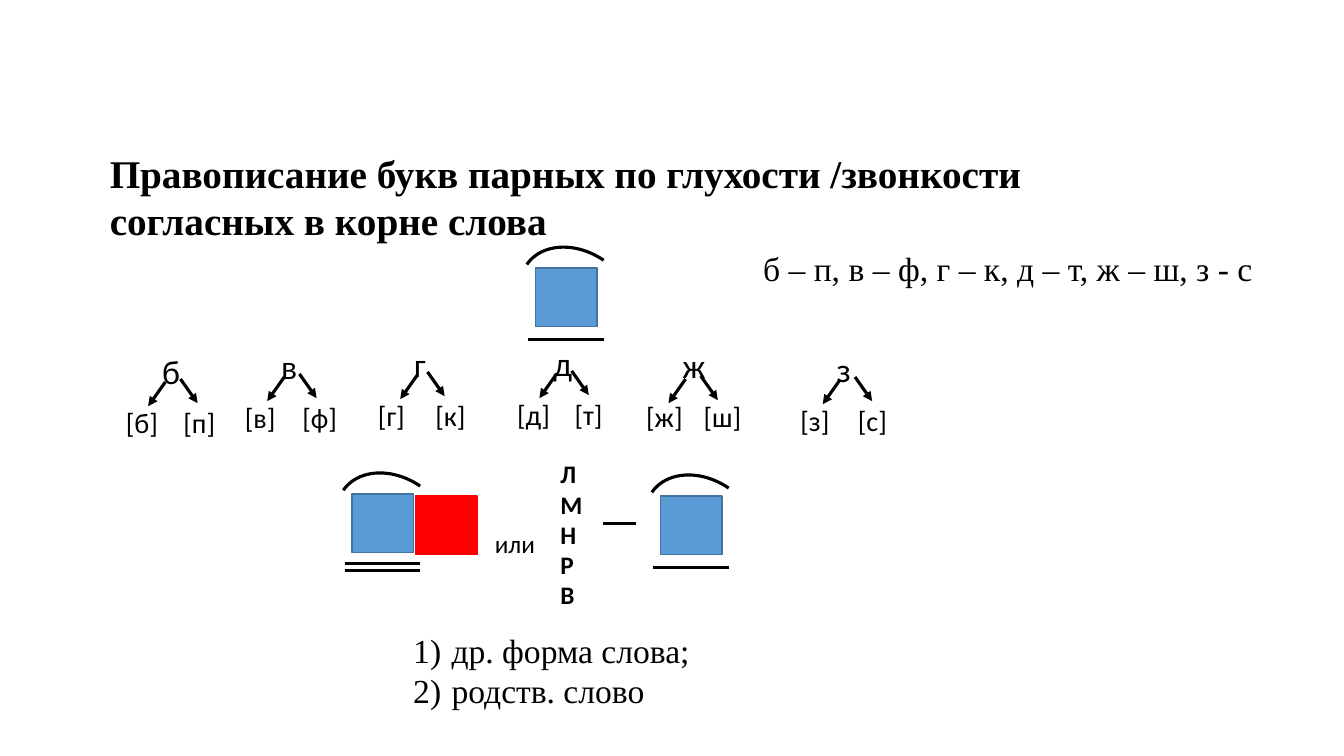
from dataclasses import dataclass

from lxml.etree import SubElement
from pptx import Presentation
from pptx.dml.color import RGBColor
from pptx.enum.shapes import MSO_CONNECTOR, MSO_SHAPE
from pptx.enum.text import MSO_AUTO_SIZE
from pptx.oxml.ns import qn
from pptx.util import Pt

PX = 9144  # 100 px to the inch


@dataclass(frozen=True)
class Theme:
    ink: RGBColor = RGBColor(0x00, 0x00, 0x00)
    root: RGBColor = RGBColor(0x5B, 0x9B, 0xD5)
    root_edge: RGBColor = RGBColor(0x43, 0x73, 0x9E)
    ending: RGBColor = RGBColor(0xFF, 0x00, 0x00)
    serif: str = "Times New Roman"
    sans: str = "Calibri"
    title: int = 28
    body: int = 24
    sound: int = 20
    small: int = 18
    stroke: float = 2.25


theme = Theme()
deck = Presentation()
deck.slide_width, deck.slide_height = 1333 * PX, 750 * PX
page = deck.slides.add_slide(deck.slide_layouts[6])


def add_text(lines, place, size, font=theme.sans, bold=False, numbered=False):
    box = page.shapes.add_textbox(*(value * PX for value in place))
    frame = box.text_frame
    frame.word_wrap = True
    frame.auto_size = MSO_AUTO_SIZE.SHAPE_TO_FIT_TEXT
    for index, line in enumerate(lines):
        para = frame.paragraphs[0] if index == 0 else frame.add_paragraph()
        if numbered:
            properties = para._p.get_or_add_pPr()
            properties.set("marL", str(38 * PX))
            properties.set("indent", str(-38 * PX))
            SubElement(properties, qn("a:buFont"), typeface="+mj-lt")
            SubElement(properties, qn("a:buAutoNum"), type="arabicParenR")
        span = para.add_run()
        span.text = line
        span.font.name = font
        span.font.size = Pt(size)
        span.font.bold = bold
        span.font.color.rgb = theme.ink


def add_stroke(start, end, arrow=False):
    stroke = page.shapes.add_connector(
        MSO_CONNECTOR.STRAIGHT, *(value * PX for value in (*start, *end)))
    stroke.line.color.rgb = theme.ink
    stroke.line.width = Pt(theme.stroke)
    if arrow:
        SubElement(stroke.line._get_or_add_ln(), qn("a:tailEnd"), type="triangle")
    SubElement(stroke._element.spPr, qn("a:effectLst"))


add_text(["Правописание букв парных по глухости /звонкости согласных в корне слова"],
         (99, 143, 1012, 104), theme.title, theme.serif, bold=True)
add_text(["б – п, в – ф, г – к, д – т, ж – ш, з - с"],
         (747, 241, 524, 50), theme.body, theme.serif)

# Letter, its two sounds, box corner, right arrow shift, drop of both arrows
letters = [
    ("б", "[б]", "[п]", 151, 343, 0, 0),
    ("в", "[в]", "[ф]", 269, 338, 0, 0),
    ("г", "[г]", "[к]", 401, 336, -5, 0),
    ("д", "[д]", "[т]", 539, 335, 0, 0),
    ("ж", "[ж]", "[ш]", 667, 337, 0, 3),
    ("з", "[з]", "[с]", 820, 341, 0, 0),
]
for letter, voiced, voiceless, left, top, shift, drop in letters:
    add_text([letter], (left, top, 58, 50), theme.body)
    add_stroke((left + 13, top + 36 + drop), (left - 4, top + 60 + drop), arrow=True)
    add_stroke((left + 28 + shift, top + 33 + drop),
               (left + 45 + shift, top + 57 + drop), arrow=True)
    add_text([voiced], (left - 36, top + 54, 58, 44), theme.sound)
    add_text([voiceless], (left + 21, top + 54, 58, 44), theme.sound)

squares = [
    (531, 266, theme.root, theme.root_edge),
    (655, 492, theme.root, theme.root_edge),
    (349, 490, theme.root, theme.root_edge),
    (412, 492, theme.ending, theme.ending),
]
for left, top, fill, edge in squares:
    square = page.shapes.add_shape(
        MSO_SHAPE.RECTANGLE, left * PX, top * PX, 61 * PX, 58 * PX)
    square.shadow.inherit = False
    square.fill.solid()
    square.fill.fore_color.rgb = fill
    square.line.color.rgb = edge
    square.line.width = Pt(1)
    if fill == theme.root:
        arc = page.shapes.add_shape(
            MSO_SHAPE.ARC, (left - 5) * PX, (top - 30) * PX, 93 * PX, 121 * PX)
        arc.rotation = 304.4
        arc.shadow.inherit = False
        arc.fill.background()
        arc.line.color.rgb = theme.ink
        arc.line.width = Pt(theme.stroke)

for left, top, width in [(524, 337, 75), (648, 563, 75), (342, 559, 75),
                         (342, 566, 75), (598, 519, 33)]:
    add_stroke((left, top), (left + width, top))

add_text(["или"], (481, 519, 82, 40), theme.small)
add_text("ЛМНРВ", (546, 450, 39, 162), theme.small, bold=True)
add_text(["др. форма слова;", "родств. слово"],
         (400, 620, 318, 91), theme.body, theme.serif, numbered=True)

deck.save("out.pptx")
